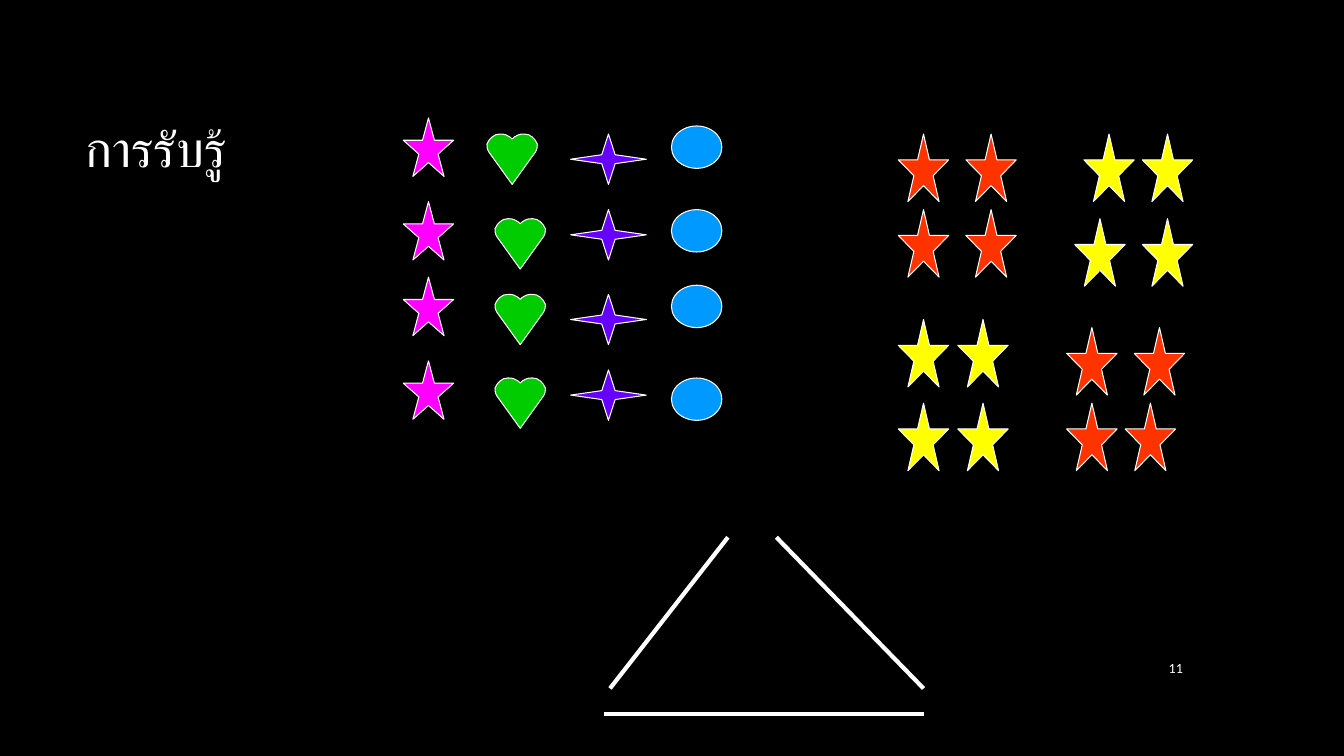
from dataclasses import dataclass

from lxml import etree
from pptx import Presentation
from pptx.dml.color import RGBColor
from pptx.enum.shapes import MSO_CONNECTOR, MSO_SHAPE
from pptx.enum.text import MSO_ANCHOR, PP_ALIGN
from pptx.oxml.ns import qn
from pptx.shapes.autoshape import Shape
from pptx.shapes.shapetree import GroupShapes
from pptx.slide import Slide
from pptx.text.text import _Paragraph
from pptx.util import Emu, Pt

PX = 9144  # EMU per px, 100 px to the inch
TITLE_ONLY = 5
SLIDE_NUMBER = 11
STAR, SPARK, OVAL = MSO_SHAPE.STAR_5_POINT, MSO_SHAPE.STAR_4_POINT, MSO_SHAPE.OVAL
STRAIGHT = MSO_CONNECTOR.STRAIGHT
MIDDLE = MSO_ANCHOR.MIDDLE
LEFT, RIGHT = PP_ALIGN.LEFT, PP_ALIGN.RIGHT

Point = tuple[int, int]


@dataclass(frozen=True)
class Theme:
    font: str = "Calibri"
    background: str = "000000"
    white: str = "FFFFFF"
    magenta: str = "FF00FF"
    green: str = "00CC00"
    violet: str = "6600FF"
    blue: str = "0099FF"
    red: str = "FF3300"
    yellow: str = "FFFF00"
    title_size: float = 36
    number_size: float = 10
    outline: float = 0.75
    stroke: float = 3


THEME = Theme()


@dataclass(frozen=True)
class Marks:
    """Equal marks at several places; no preset means a heart."""
    preset: MSO_SHAPE | None
    fill: str
    width: int
    height: int
    places: tuple[Point, ...]


def star_block(fill: str, *places: Point) -> Marks:
    return Marks(STAR, fill, 50, 67, places)


COLUMNS = (
    Marks(STAR, THEME.magenta, 50, 58, tuple((400, y) for y in (117, 200, 275, 358))),
    Marks(SPARK, THEME.violet, 75, 50, tuple((566, y) for y in (133, 208, 292, 367))),
    Marks(None, THEME.green, 50, 50, ((483, 133), (491, 217), (491, 292), (491, 375))),
    Marks(OVAL, THEME.blue, 50, 42, tuple((666, y) for y in (125, 208, 283, 375))),
)
STAR_BLOCKS = (
    star_block(THEME.red, (891, 133), (891, 208), (958, 133), (958, 208)),
    star_block(THEME.yellow, (1075, 133), (1133, 133), (1066, 217), (1133, 217)),
    star_block(THEME.yellow, (891, 317), (950, 317), (891, 400), (950, 400)),
    star_block(THEME.red, (1058, 325), (1125, 325), (1058, 400), (1116, 400)),
)
TRIANGLE_SIDES = (
    (605, 683, 722, 533),
    (770, 533, 916, 683),
    (599, 708, 916, 708),
)
# Left lobe of the heart in a 50 by 50 px box: notch, then the points of
# its cubic curves, two controls and an end each
HEART_LOBE = (
    (25, 5),
    (24, 4), (22, 2), (21, 2),
    (18, 0), (15, 0), (13, 0),
    (10, 0), (7, 1), (5, 3),
    (3, 5), (1, 7), (0, 10),
    (0, 12), (0, 15), (2, 18),
)
HEART_TIP = (25, 50)


def color(value: str) -> RGBColor:
    return RGBColor.from_string(value)


def px(*lengths: int) -> list[Emu]:
    return [Emu(length * PX) for length in lengths]


def draw_heart(shapes: GroupShapes, left: int, top: int) -> Shape:
    mirrored = [(50 - x, y) for x, y in reversed(HEART_LOBE)]
    builder = shapes.build_freeform(*HEART_LOBE[0], scale=PX)
    builder.add_line_segments(
        [*HEART_LOBE[3::3], HEART_TIP, *mirrored[::3]], close=True
    )
    heart = builder.convert_to_shape(*px(left, top))

    # Bend the lobe segments; the two at the tip stay straight
    lines = list(heart._element.iter(qn("a:lnTo")))
    curve_count = len(HEART_LOBE) // 3
    bends = zip(lines[:curve_count] + lines[-curve_count:],
                [*range(1, len(HEART_LOBE), 3)] * 2,
                [HEART_LOBE] * curve_count + [mirrored] * curve_count)
    for line, first, points in bends:
        curve = etree.Element(qn("a:cubicBezTo"))
        for x, y in points[first:first + 3]:
            etree.SubElement(curve, qn("a:pt"), x=str(x), y=str(y))
        line.getparent().replace(line, curve)
    return heart


def draw_marks(shapes: GroupShapes, marks: Marks) -> None:
    for left, top in marks.places:
        if marks.preset is None:
            shape = draw_heart(shapes, left, top)
        else:
            shape = shapes.add_shape(
                marks.preset, *px(left, top, marks.width, marks.height)
            )
        if marks.preset == SPARK:
            shape.adjustments[0] = 0.125
        shape.shadow.inherit = False
        shape.fill.solid()
        shape.fill.fore_color.rgb = color(marks.fill)
        shape.line.color.rgb = color(THEME.white)
        shape.line.width = Pt(THEME.outline)


def draw_side(shapes: GroupShapes, ends: tuple[int, int, int, int]) -> None:
    side = shapes.add_connector(STRAIGHT, *px(*ends))
    side.line.color.rgb = color(THEME.white)
    side.line.width = Pt(THEME.stroke)
    etree.SubElement(side._element.spPr, qn("a:effectLst"))


def format_paragraph(paragraph: _Paragraph, size: float, alignment: PP_ALIGN) -> None:
    paragraph.alignment = alignment
    paragraph.font.name = THEME.font
    paragraph.font.size = Pt(size)
    paragraph.font.color.rgb = color(THEME.white)


def write_title(slide: Slide) -> None:
    title = slide.shapes.title
    title.left, title.top, title.width, title.height = px(75, 67, 1108, 159)
    title.text_frame.text = "การรับรู้"
    title.text_frame.vertical_anchor = MIDDLE
    format_paragraph(title.text_frame.paragraphs[0], THEME.title_size, LEFT)


def write_slide_number(slide: Slide) -> None:
    box = slide.shapes.add_textbox(*px(1123, 642, 60, 41))
    box.text_frame.word_wrap = True
    box.text_frame.vertical_anchor = MIDDLE
    paragraph = box.text_frame.paragraphs[0]
    field = etree.SubElement(
        paragraph._p, qn("a:fld"),
        id="{B6F15528-21DE-4FAA-801E-634DDDAF4B2B}", type="slidenum",
    )
    etree.SubElement(field, qn("a:rPr"), lang="en-US")
    etree.SubElement(field, qn("a:t")).text = str(SLIDE_NUMBER)
    format_paragraph(paragraph, THEME.number_size, RIGHT)


def main() -> None:
    presentation = Presentation()
    presentation.slide_width, presentation.slide_height = px(1333, 750)
    presentation.element.set("firstSlideNum", str(SLIDE_NUMBER))
    slide = presentation.slides.add_slide(presentation.slide_layouts[TITLE_ONLY])
    slide.background.fill.solid()
    slide.background.fill.fore_color.rgb = color(THEME.background)

    # Title and slide number
    write_title(slide)
    write_slide_number(slide)

    # Columns of equal marks
    columns = slide.shapes.add_group_shape().shapes
    for column in COLUMNS:
        draw_marks(columns, column)

    # Blocks of four stars
    for block in STAR_BLOCKS:
        draw_marks(slide.shapes.add_group_shape().shapes, block)

    # Open triangle
    triangle = slide.shapes.add_group_shape().shapes
    for ends in TRIANGLE_SIDES:
        draw_side(triangle, ends)

    presentation.save("out.pptx")


if __name__ == "__main__":
    main()
